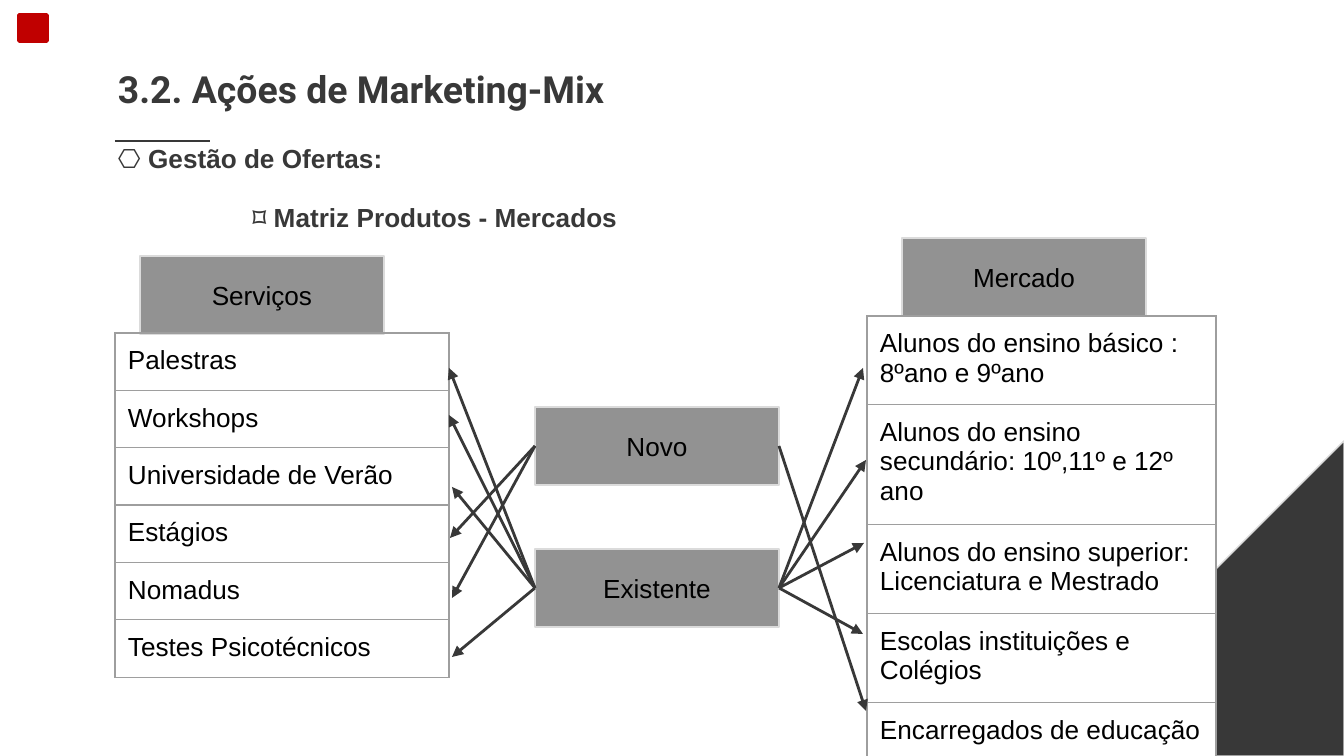
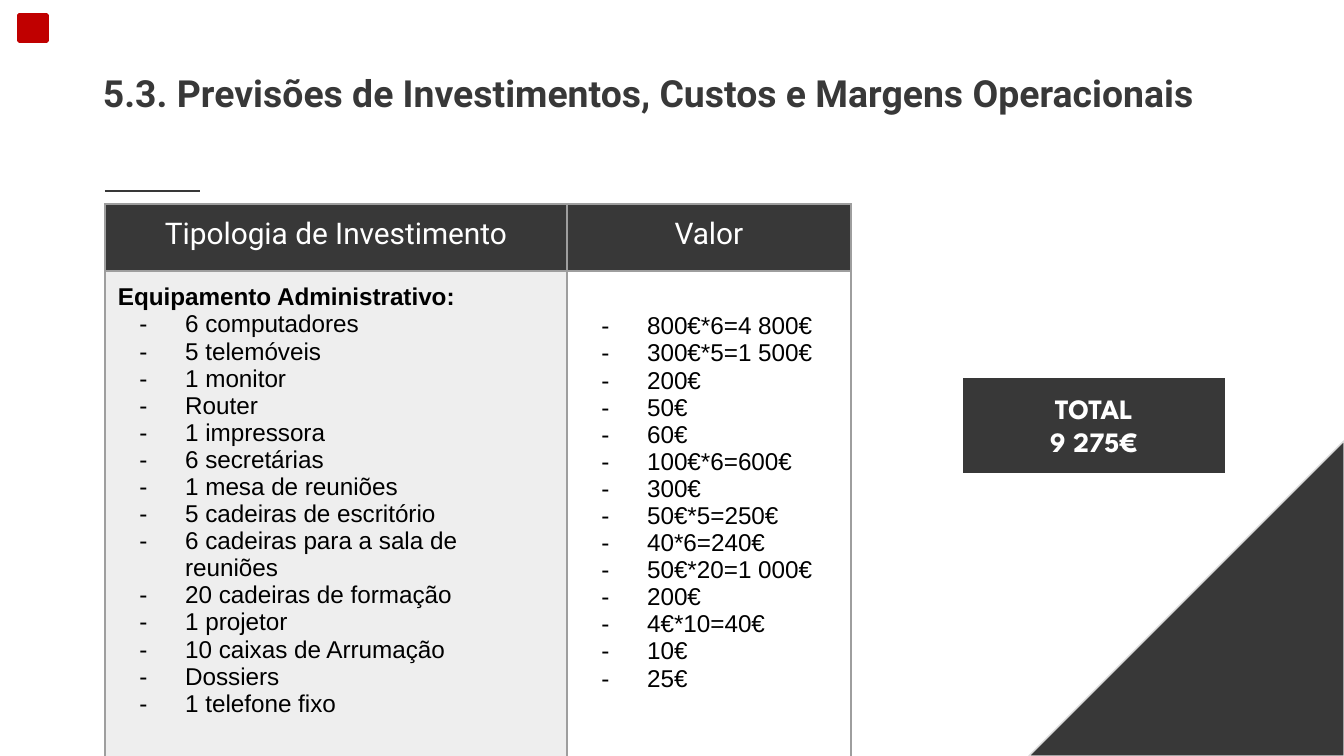
"""Build two marketing-plan slides: the product-market matrix and the investment forecast."""
from lxml.etree import SubElement
from pptx import Presentation
from pptx.dml.color import RGBColor
from pptx.enum.shapes import MSO_CONNECTOR as Connector, MSO_SHAPE as Shape
from pptx.enum.text import MSO_ANCHOR as Anchor, PP_ALIGN as Align
from pptx.oxml import parse_xml
from pptx.oxml.ns import nsdecls, qn
from pptx.util import Pt


class Theme:
    dark = RGBColor.from_string("383838")
    grey = RGBColor.from_string("929292")
    pale = RGBColor.from_string("EEEEEE")
    edge = RGBColor.from_string("DBDBDB")
    border = RGBColor.from_string("9E9E9E")
    red = RGBColor.from_string("C00000")
    black = RGBColor.from_string("000000")
    white = RGBColor.from_string("FFFFFF")
    body_font, title_font, total_font = "Arial", "Roboto", "League Spartan"
    title_size, header_size, total_size, body_size, list_size = 20, 16, 15, 14, 13


PX = 914400 / 134.4
PAD = 13


def px(*lengths):
    return [round(length * PX) for length in lengths]


def write(frame, lines, size=Theme.body_size, font=Theme.body_font, color=Theme.black,
          bold=False, align=Align.LEFT, anchor=Anchor.TOP):
    frame.word_wrap = True
    frame.vertical_anchor = anchor
    frame.margin_left = frame.margin_right = frame.margin_top = frame.margin_bottom = px(PAD)[0]
    for number, line in enumerate(lines):
        para = frame.add_paragraph() if number else frame.paragraphs[0]
        para.text = line
        para.alignment = align
        for target in (para.font, para.runs[0].font):
            target.size = Pt(size)
            target.name = font
            target.bold = bold
            target.color.rgb = color


deck = Presentation()
deck.slide_width, deck.slide_height = px(1344, 756)
pages, connectors = [], []

titles = [
    ("3.2. Ações de Marketing-Mix", 105, 46, 115, 141),
    ("5.3. Previsões de Investimentos, Custos e Margens Operacionais", 90, 50, 105, 191),
]
for title, left, top, rule_left, rule_top in titles:
    page = deck.slides.add_slide(deck.slide_layouts[6])
    pages.append(page)
    corner = page.shapes.add_shape(Shape.RIGHT_TRIANGLE, *px(1029, 441, 315, 315))
    corner._element.spPr.xfrm.set("flipH", "1")
    marker = page.shapes.add_shape(Shape.RECTANGLE, *px(19, 15, 28, 26))
    for shape, fill, line, width in [(corner, Theme.dark, Theme.edge, 0.75),
                                     (marker, Theme.red, Theme.red, 2)]:
        shape.shadow.inherit = False
        shape.fill.solid()
        shape.fill.fore_color.rgb = fill
        shape.line.color.rgb = line
        shape.line.width = Pt(width)
    box = page.shapes.add_textbox(*px(left, top, 1191, 78))
    write(box.text_frame, [title], Theme.title_size, Theme.title_font, Theme.dark, bold=True)
    box.text_frame.paragraphs[0].line_spacing = 1.15
    connectors.append(page.shapes.add_connector(
        Connector.STRAIGHT, *px(rule_left, rule_top, rule_left + 95, rule_top)))

matrix, forecast = pages

box = matrix.shapes.add_textbox(*px(105, 125, 934, 130))
write(box.text_frame, ["⎔ Gestão de Ofertas:", "⌑ Matriz Produtos - Mercados"],
      color=Theme.dark, bold=True)
for para in box.text_frame.paragraphs:
    para.line_spacing = 1.15
para.space_before = Pt(12)
para._p.get_or_add_pPr().set("marL", "914400")

labels = {}
for label, left, top in [("Serviços", 140, 256), ("Mercado", 902, 238),
                         ("Existente", 535, 549), ("Novo", 535, 407)]:
    box = labels[label] = matrix.shapes.add_shape(Shape.RECTANGLE, *px(left, top, 244, 78))
    box.shadow.inherit = False
    box.fill.solid()
    box.fill.fore_color.rgb = Theme.grey
    box.line.color.rgb = Theme.edge
    box.line.width = Pt(0.75)
    write(box.text_frame, [label], align=Align.CENTER, anchor=Anchor.MIDDLE)

services = ["Palestras", "Workshops", "Universidade de Verão", "Estágios", "Nomadus",
            "Testes Psicotécnicos"]
markets = ["Alunos do ensino básico : 8ºano e 9ºano",
           "Alunos do ensino secundário: 10º,11º e 12º ano",
           "Alunos do ensino superior: Licenciatura e Mestrado",
           "Escolas instituições e Colégios",
           "Encarregados de educação"]
equipment = ["Equipamento Administrativo:", "6 computadores", "5 telemóveis", "1 monitor",
             "Router", "1 impressora", "6 secretárias", "1 mesa de reuniões",
             "5 cadeiras de escritório", "6 cadeiras para a sala de reuniões",
             "20 cadeiras de formação", "1 projetor", "10 caixas de Arrumação", "Dossiers",
             "1 telefone fixo"]
values = ["800€*6=4 800€", "300€*5=1 500€", "200€", "50€", "60€", "100€*6=600€", "300€",
          "50€*5=250€", "40*6=240€", "50€*20=1 000€", "200€", "4€*10=40€", "10€", "25€"]

plain = dict(size=Theme.body_size)
header = dict(size=Theme.header_size, font=Theme.title_font, color=Theme.white,
              align=Align.CENTER)
listing = dict(size=Theme.list_size)
tables = [
    (matrix, 115, 333, [334], [56] * 6, [[([name], None, plain)] for name in services]),
    (matrix, 867, 316, [349], [86, 115, 85, 86, 60],
     [[([name], Theme.white, plain)] for name in markets]),
    (forecast, 105, 204, [462, 284], [67, 460],
     [[(["Tipologia de Investimento"], Theme.dark, header), (["Valor"], Theme.dark, header)],
      [(equipment, Theme.pale, listing), (values, None, listing)]]),
]
for page, left, top, widths, heights, rows in tables:
    table = page.shapes.add_table(len(heights), len(widths),
                                  *px(left, top, sum(widths), sum(heights))).table
    table.first_row = table.horz_banding = False
    for column, width in zip(table.columns, px(*widths)):
        column.width = width
    for row, height, entries in zip(table.rows, px(*heights), rows):
        row.height = height
        for cell, (lines, fill, style) in zip(row.cells, entries):
            write(cell.text_frame, lines, **style)
            cell.margin_left = cell.margin_right = px(PAD)[0]
            cell.margin_top = cell.margin_bottom = px(PAD)[0]
            for side in "LRTB":
                cell._tc.get_or_add_tcPr().append(parse_xml(
                    f'<a:ln{side} {nsdecls("a")} w="9525"><a:solidFill>'
                    f'<a:srgbClr val="{Theme.border}"/></a:solidFill></a:ln{side}>'))
            if fill is None:
                cell.fill.background()
            else:
                cell.fill.solid()
                cell.fill.fore_color.rgb = fill

items, amounts = table.cell(1, 0), table.cell(1, 1)
amounts.margin_top = px(42)[0]
heading, *item_paras = items.text_frame.paragraphs
heading.font.bold = heading.runs[0].font.bold = True
for para in [*item_paras, *amounts.text_frame.paragraphs]:
    properties = para._p.get_or_add_pPr()
    properties.set("marL", "457200")
    properties.set("indent", "-310896")
    properties.insert(0, parse_xml(f'<a:buChar {nsdecls("a")} char="-"/>'))
    properties.insert(0, parse_xml(f'<a:buFont {nsdecls("a")} typeface="{Theme.body_font}"/>'))
    properties.insert(0, parse_xml(
        f'<a:buClr {nsdecls("a")}><a:srgbClr val="{Theme.black}"/></a:buClr>'))

arrows = [
    ("Existente", 3, [(863, 368), (866, 460), (864, 543), (863, 634)]),
    ("Novo", 3, [(866, 711)]),
    ("Existente", 1, [(449, 368), (452, 487), (452, 657), (449, 415)]),
    ("Novo", 1, [(450, 538), (452, 598)]),
]
for label, side, tips in arrows:
    for tip in tips:
        arrow = matrix.shapes.add_connector(Connector.STRAIGHT, *px(*tip, *tip))
        arrow.begin_connect(labels[label], side)
        SubElement(arrow.line._get_or_add_ln(), qn("a:tailEnd"), type="triangle")
        connectors.append(arrow)

for connector in connectors:
    connector.line.color.rgb = Theme.dark
    connector.line.width = Pt(1.5)
    SubElement(connector._element.spPr, qn("a:effectLst"))

total = forecast.shapes.add_shape(Shape.RECTANGLE, *px(963, 378, 262, 95))
total.shadow.inherit = False
total.fill.solid()
total.fill.fore_color.rgb = Theme.dark
total.line.fill.background()
write(total.text_frame, ["TOTAL", "9 275€"], Theme.total_size, Theme.total_font, Theme.white,
      bold=True, align=Align.CENTER)

deck.save("out.pptx")
